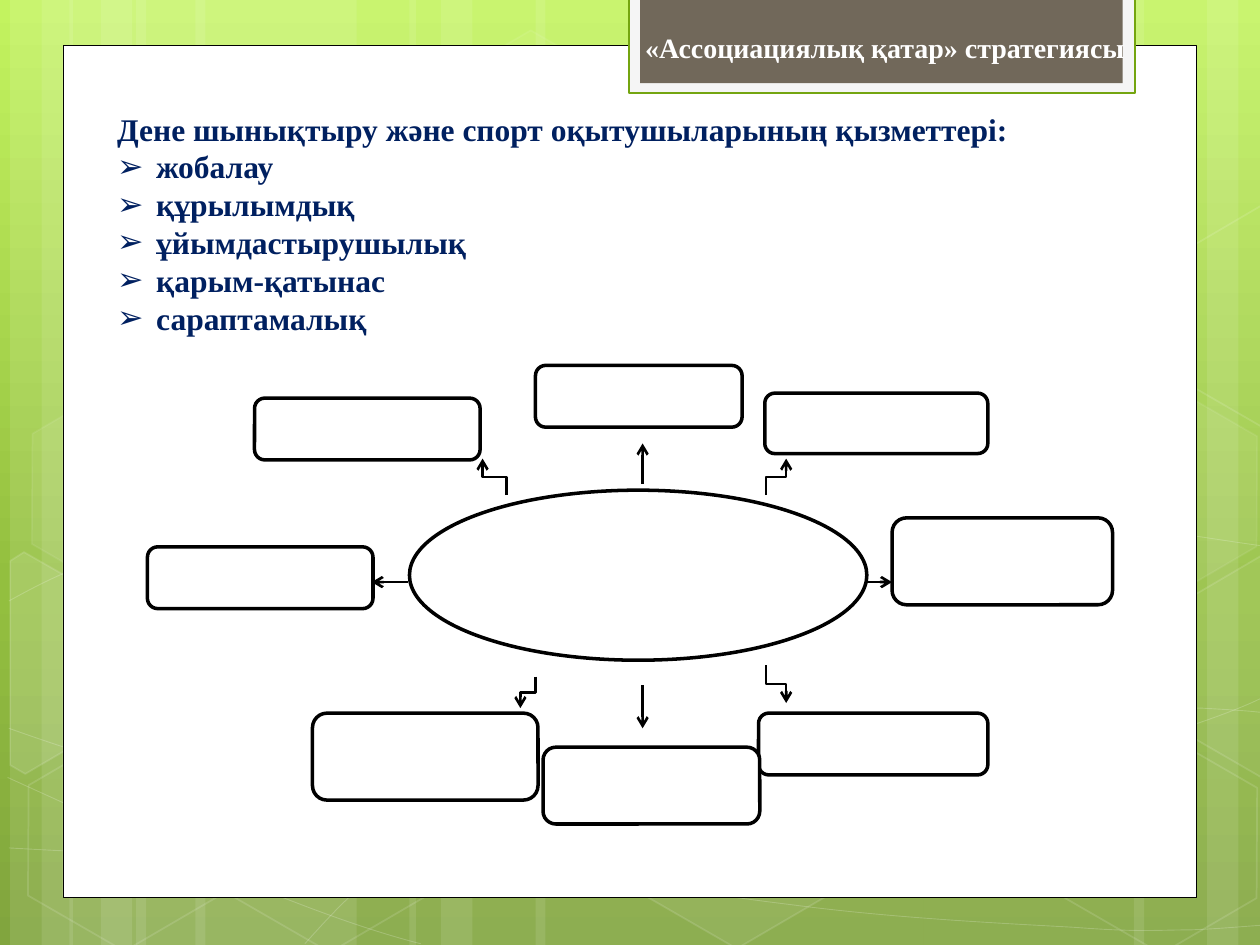
import math
import pptx
import pptx.util
import pptx.dml.color
import pptx.enum.shapes
import pptx.enum.text
import pptx.oxml.ns
import lxml.etree

SHAPES = pptx.enum.shapes.MSO_SHAPE
CONNECTORS = pptx.enum.shapes.MSO_CONNECTOR
FONT = "Times New Roman"
TITLE = "«Ассоциациялық қатар» стратегиясы"
HEADING = "Дене шынықтыру және спорт оқытушыларының қызметтері:"
DUTIES = ["жобалау", "құрылымдық", "ұйымдастырушылық", "қарым-қатынас", "сараптамалық"]

SKY = [(0, "C3F35F"), (62, "93BF3F"), (100, "81A53E")]
# Background bands: left, width
BANDS = [(1.08, 1.75), (0.08, 0.5), (0.33, 0.83), (1.55, 1.75), (0.55, 0.5), (0.8, 0.83),
         (7.33, 1.75), (9.58, 0.5), (9, 0.83), (4.25, 3.08), (3.25, 0.5), (3.5, 0.83)]
# Each curve is a list of pieces: a start point, then two handles and an end, or the end of a line
CURVES = [
    [[(0.07, 6.73)], [(0.61, 6.76), (1.15, 6.79), (1.9, 6.78)], [(2.65, 6.77), (3.58, 6.75), (4.58, 6.65)],
     [(5.58, 6.55), (7, 6.36), (7.92, 6.17)], [(8.83, 5.98), (9.77, 5.68), (10.07, 5.51)]],
    [[(0.07, 4.77)], [(0.36, 4.61), (0.65, 4.46), (1.21, 4.31)], [(1.78, 4.16), (2.59, 3.94), (3.47, 3.87)],
     [(4.36, 3.8), (5.44, 3.79), (6.54, 3.87)], [(7.64, 3.95), (9.47, 4.26), (10.07, 4.34)]],
    [[(0.06, 6.17)], [(1.27, 6.72), (2.47, 7.27), (3.34, 7.49)]],
    [[(0.07, 5.78)], [(0.38, 5.89), (0.7, 6), (1.28, 6.16)], [(1.86, 6.31), (2.73, 6.56), (3.57, 6.73)],
     [(4.4, 6.9), (5.45, 7.08), (6.28, 7.18)], [(7.11, 7.29), (8, 7.33), (8.53, 7.36)],
     [(9.05, 7.4), (9.19, 7.38), (9.45, 7.38)], [(9.71, 7.37), (9.89, 7.35), (10.07, 7.34)]],
    [[(2.42, 7.49)], [(2.6, 7.29), (2.78, 7.09), (3.02, 6.91)], [(3.26, 6.73), (3.6, 6.53), (3.88, 6.39)],
     [(4.16, 6.25), (4.33, 6.19), (4.7, 6.09)], [(5.06, 5.99), (5.73, 5.85), (6.08, 5.78)],
     [(6.44, 5.71), (6.49, 5.71), (6.8, 5.69)], [(7.11, 5.66), (7.6, 5.63), (7.94, 5.62)],
     [(8.29, 5.61), (8.86, 5.62), (8.86, 5.62)], [(9.53, 5.62)],
     [(9.71, 5.63), (9.88, 5.64), (9.97, 5.65)], [(10.06, 5.66), (10.03, 5.65), (10.06, 5.66)]],
]
TILT = 30
# Left, top, fill opacity (0: no fill), line opacity
HEXAGONS = [(3.34, 0.36, 4, 8), (4.97, 5.89, 6, 12), (0.11, 5.91, 0, 12), (0.14, 3.12, 7, 8),
            (1.74, 5.92, 0, 12), (7.53, 4.53, 10, 12), (8.34, 5.93, 0, 12), (8.34, 3.14, 7, 8)]
# Hexagons cut by the slide's edge: fill opacity, centre, corners as they show
CUT_HEXAGONS = [
    (10, (0.36, 5.35), [(0.08, 4.45), (0.19, 4.38), (0.96, 4.82), (0.95, 5.7), (0.2, 6.14), (0.08, 6.07)]),
    (4, (9.85, 5.2), [(9.26, 4.85), (10.01, 4.41), (10.09, 4.46), (10.09, 6.13), (10.02, 6.17), (9.26, 5.73)]),
    (0, (9.85, 2.41), [(9.26, 2.07), (10.01, 1.63), (10.1, 1.68), (10.09, 3.35), (10.02, 3.39), (9.26, 2.95)]),
]
PANELS = [((0.5, 0.36, 9, 6.76), {"fill": "FFFFFF", "line": "000000", "width": 0.5}),
          ((4.99, -0.02, 4.02, 0.76), {"fill": "F5F5F5", "line": "74A510", "width": 1.25}),
          ((5.08, -0.02, 3.83, 0.68), {"fill": "71685A"})]
HUB = (3.25, 3.89, 3.63, 1.35)
ARROWS = [((5.1, 3.84), (5.1, 3.52)), ((6.87, 4.62), (7.08, 4.62)), ((6.08, 3.93), (6.24, 3.64)),
          ((3.24, 4.62), (2.95, 4.62)), ((4.02, 3.93), (3.83, 3.64)), ((5.1, 5.44), (5.1, 5.78)),
          ((6.08, 5.28), (6.24, 5.58)), ((4.25, 5.37), (4.13, 5.62))]
BOXES = [(2.02, 3.16, 1.79, 0.49), (6.02, 5.66, 1.82, 0.49), (7.08, 4.11, 1.75, 0.69),
         (6.07, 3.12, 1.77, 0.48), (4.25, 2.9, 1.64, 0.49), (1.17, 4.34, 1.79, 0.49),
         (2.48, 5.66, 1.79, 0.69), (4.31, 5.93, 1.72, 0.61)]
OUTLINED = {"fill": "FFFFFF", "line": "000000", "width": 2}

deck = pptx.Presentation()
deck.slide_width, deck.slide_height = pptx.util.Inches(10), pptx.util.Inches(7.5)
page = deck.slides.add_slide(deck.slide_layouts[1])
qn = pptx.oxml.ns.qn


def color(hex_text):
    return pptx.dml.color.RGBColor.from_string(hex_text)


def inches(values):
    return [pptx.util.Inches(value) for value in values]


def add_child(parent, tag, **attributes):
    child = lxml.etree.SubElement(parent, qn(tag))
    for name, value in attributes.items():
        child.set(name, str(value))
    return child


def solid(fill, hex_text, opacity, owner):
    """Fill with a colour; owner is the XML element that holds the fill."""
    fill.solid()
    fill.fore_color.rgb = color(hex_text)
    if opacity < 100:
        add_child(owner.find(qn("a:solidFill"))[0], "a:alpha", val=opacity * 1000)


def paint(shape, fill=None, opacity=100, line=None, width=1, line_opacity=100):
    shape.shadow.inherit = False
    properties = shape.element.spPr
    if fill and opacity:
        solid(shape.fill, fill, opacity, properties)
    else:
        shape.fill.background()
    if line:
        shape.line.width = pptx.util.Pt(width)
        solid(shape.line.fill, line, line_opacity, properties.find(qn("a:ln")))
    else:
        shape.line.fill.background()


def add_shape(kind, place, **look):
    shape = page.shapes.add_shape(kind, *inches(place))
    paint(shape, **look)
    return shape


def add_outline(points, close, **look):
    start, *rest = [inches(point) for point in points]
    builder = page.shapes.build_freeform(*start, scale=1.0)
    builder.add_line_segments(rest, close=close)
    outline = builder.convert_to_shape()
    paint(outline, **look)
    return outline


def add_curve(pieces, **look):
    """Draw the points as an outline, then join each three of a bent piece into one Bezier."""
    curve = add_outline([point for piece in pieces for point in piece], False, **look)
    segments = iter(list(curve.element.iter(qn("a:lnTo"))))
    for piece in pieces[1:]:
        parts = [next(segments) for point in piece]
        if len(parts) == 3:
            bend = lxml.etree.Element(qn("a:cubicBezTo"))
            parts[0].addprevious(bend)
            for part in parts:
                bend.append(part[0])
                part.getparent().remove(part)


def turned(point, center, degrees):
    dx, dy = point[0] - center[0], point[1] - center[1]
    cosine, sine = math.cos(math.radians(degrees)), math.sin(math.radians(degrees))
    return center[0] + dx * cosine - dy * sine, center[1] + dx * sine + dy * cosine


def add_arrow(start, end):
    """Straight arrow, or an elbow that leaves and arrives vertically."""
    (x1, y1), (x2, y2) = start, end
    bent = x1 != x2 and y1 != y2
    ends, kind = (x1, y1, x2, y2), CONNECTORS.STRAIGHT
    if bent:
        kind, down = CONNECTORS.ELBOW, y2 > y1
        middle_x, middle_y = (x1 + x2) / 2, (y1 + y2) / 2
        half_run = abs(y2 - y1) / 2
        half_rise = (x1 - x2) / 2 if down else (x2 - x1) / 2
        ends = (middle_x - half_run, middle_y - half_rise, middle_x + half_run, middle_y + half_rise)
    arrow = page.shapes.add_connector(kind, *inches(ends))
    properties = arrow.element.spPr
    if bent:
        properties.find(qn("a:xfrm")).set("rot", str((90 if down else 270) * 60000))
    arrow.line.width = pptx.util.Pt(1.5)
    arrow.line.color.rgb = color("000000")
    add_child(properties.find(qn("a:ln")), "a:tailEnd", type="arrow")
    add_child(properties, "a:effectLst")


def write(box, place, lines, size, hex_text, line_spacing=1.0):
    """Fill a placeholder and bring it to the front."""
    box.left, box.top, box.width, box.height = inches(place)
    frame = box.text_frame
    frame.text = "\n".join(lines)
    frame.word_wrap = True
    frame.auto_size = pptx.enum.text.MSO_AUTO_SIZE.NONE
    frame.vertical_anchor = pptx.enum.text.MSO_ANCHOR.TOP
    text_format = {"name": FONT, "size": pptx.util.Pt(size), "bold": True}
    for para in frame.paragraphs:
        para.alignment = pptx.enum.text.PP_ALIGN.LEFT
        para.space_before = pptx.util.Pt(0)
        para.line_spacing = line_spacing
        for span in para.runs:
            for name, value in text_format.items():
                setattr(span.font, name, value)
            span.font.color.rgb = color(hex_text)
    box.element.getparent().append(box.element)
    return frame.paragraphs


def set_bullet(para, mark=None, hang=0):
    properties = para._p.get_or_add_pPr()
    properties.set("marL", str(pptx.util.Inches(hang)))
    properties.set("indent", str(-pptx.util.Inches(hang)))
    if mark:
        add_child(properties, "a:buChar", char=mark)
    else:
        add_child(properties, "a:buNone")


page.background.fill.gradient()
gradient = next(page.element.iter(qn("a:gradFill")))
stops = gradient.find(qn("a:gsLst"))
for old_stop in list(stops):
    stops.remove(old_stop)
for position, hue in SKY:
    add_child(add_child(stops, "a:gs", pos=position * 1000), "a:srgbClr", val=hue)
gradient.find(qn("a:lin")).set("ang", str(90 * 60000))

for left, width in BANDS:
    add_shape(SHAPES.RECTANGLE, (left, 0, width, 7.5), fill="FFFFFF", opacity=10)
for pieces in CURVES:
    add_curve(pieces, line="FFFFFF", width=0.5, line_opacity=20)
for left, top, opacity, line_opacity in HEXAGONS:
    hexagon = add_shape(SHAPES.HEXAGON, (left, top, 1.75, 1.52), fill="FFFFFF", opacity=opacity,
                        line="FFFFFF", line_opacity=line_opacity)
    hexagon.rotation = TILT
    hexagon.adjustments[0], hexagon.adjustments[1] = 0.285, 1.155
for opacity, center, corners in CUT_HEXAGONS:
    upright = [turned(corner, center, -TILT) for corner in corners]
    add_outline(upright, True, fill="FFFFFF", opacity=opacity, line="FFFFFF", line_opacity=12).rotation = TILT

for place, look in PANELS:
    add_shape(SHAPES.RECTANGLE, place, **look)
add_shape(SHAPES.OVAL, HUB, **OUTLINED)
for start, end in ARROWS:
    add_arrow(start, end)
for place in BOXES:
    add_shape(SHAPES.ROUNDED_RECTANGLE, place, **OUTLINED)

write(page.shapes.title, (5.02, 0.19, 4.31, 0.63), [TITLE], 16, "FFFFFF")
heading, *items = write(page.placeholders[1], (0.83, 0.82, 7.92, 1.92), [HEADING] + DUTIES, 18, "002060",
                        line_spacing=pptx.util.Pt(21.6))
set_bullet(heading)
for item in items:
    set_bullet(item, "➢", 0.31)

deck.save("out.pptx")
